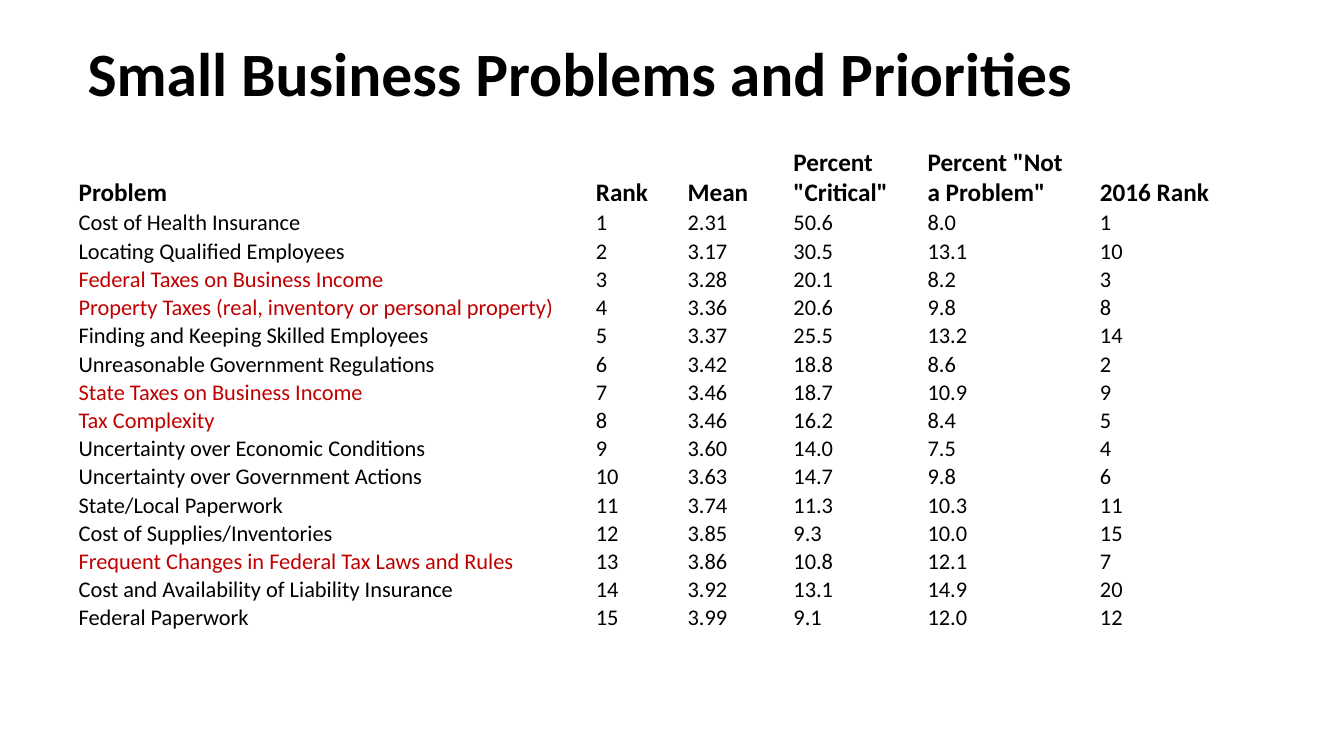
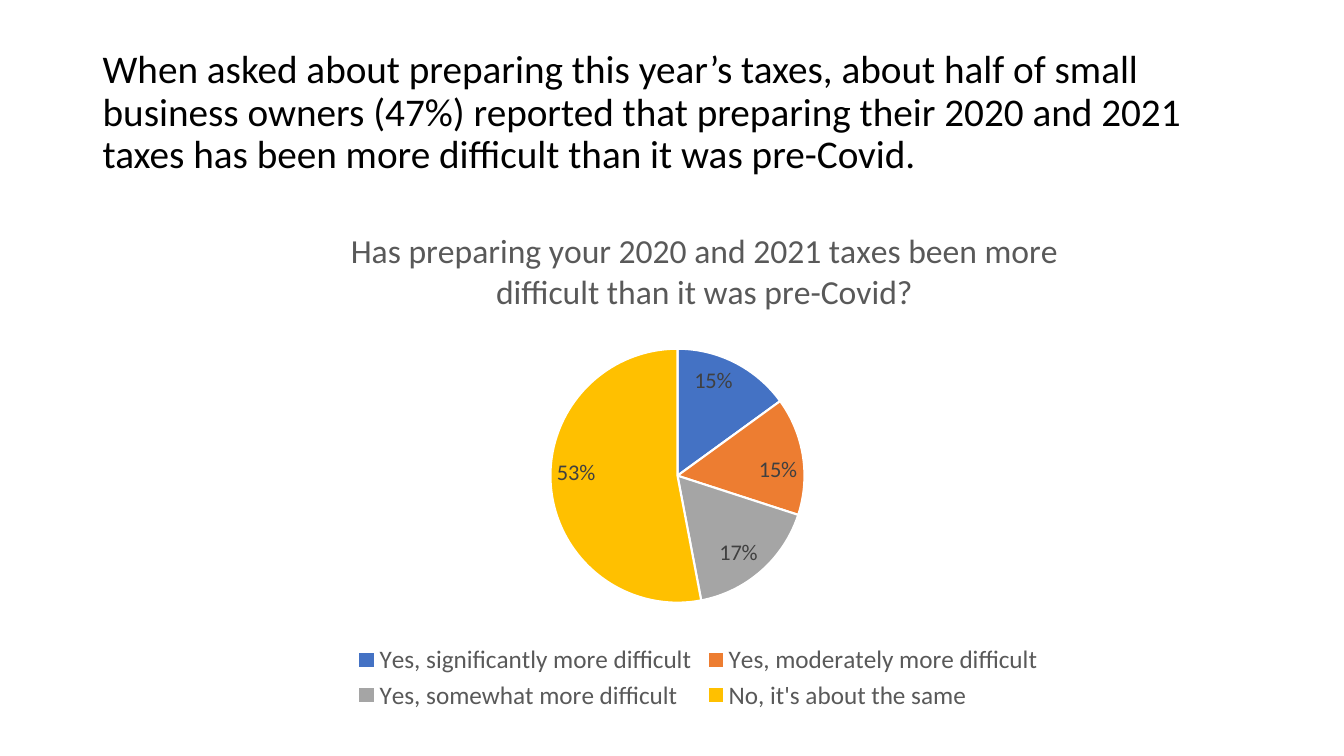
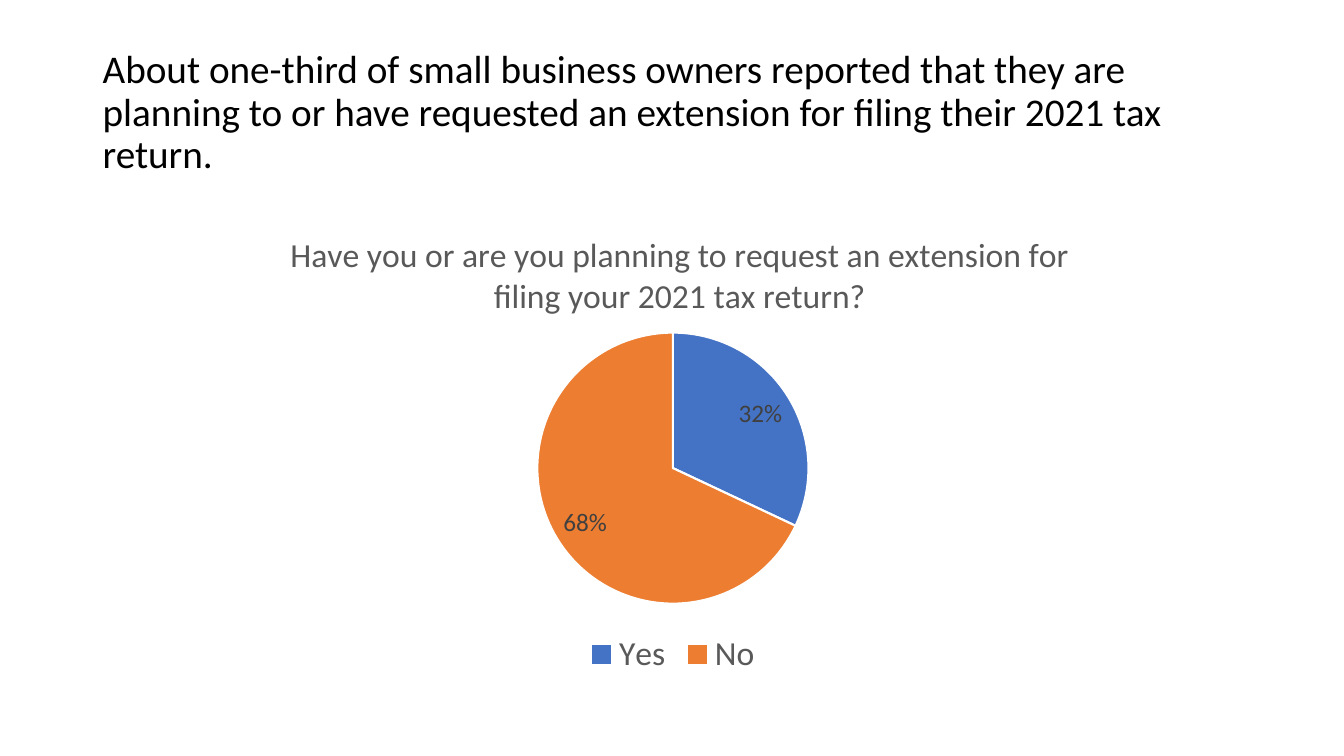
from dataclasses import dataclass

from lxml import etree
from pptx import Presentation
from pptx.chart.data import CategoryChartData
from pptx.dml.color import RGBColor
from pptx.enum.chart import XL_CHART_TYPE, XL_LABEL_POSITION, XL_LEGEND_POSITION
from pptx.enum.text import MSO_ANCHOR
from pptx.oxml.ns import qn
from pptx.util import Inches, Pt

PIE = XL_CHART_TYPE.PIE
INSIDE_END = XL_LABEL_POSITION.INSIDE_END
LEGEND_BOTTOM = XL_LEGEND_POSITION.BOTTOM
MIDDLE, BOTTOM = MSO_ANCHOR.MIDDLE, MSO_ANCHOR.BOTTOM


@dataclass(frozen=True)
class Theme:
    font: str = "Calibri"
    ink: str = "000000"
    tax: str = "C00000"
    chart_text: str = "595959"
    label: str = "404040"
    paper: str = "FFFFFF"
    slices: tuple = ("4472C4", "ED7D31", "A5A5A5", "FFC000")
    headline: int = 44
    statement: int = 28
    question: int = 24
    header: int = 18
    body: int = 16


THEME = Theme()
TITLE_SIZE = (11.5, 1.45)

PROBLEMS_TITLE = "Small Business Problems and Priorities"
TABLE_AT = (0.77, 1.45)
COLUMN_WIDTHS = (5.13, 0.91, 1.05, 1.33, 1.71, 1.24)
HEADER_HEIGHT, ROW_HEIGHT = 0.62, 0.28
HEADERS = ("Problem", "Rank", "Mean", 'Percent "Critical"',
           'Percent "Not\va Problem"', "2016 Rank")
# problem, mean, percent critical, percent not a problem, 2016 rank
PROBLEMS = [
    ("Cost of Health Insurance", "2.31", "50.6", "8.0", "1"),
    ("Locating Qualified Employees", "3.17", "30.5", "13.1", "10"),
    ("Federal Taxes on Business Income", "3.28", "20.1", "8.2", "3"),
    ("Property Taxes (real, inventory or personal property)",
     "3.36", "20.6", "9.8", "8"),
    ("Finding and Keeping Skilled Employees", "3.37", "25.5", "13.2", "14"),
    ("Unreasonable Government Regulations", "3.42", "18.8", "8.6", "2"),
    ("State Taxes on Business Income", "3.46", "18.7", "10.9", "9"),
    ("Tax Complexity", "3.46", "16.2", "8.4", "5"),
    ("Uncertainty over Economic Conditions", "3.60", "14.0", "7.5", "4"),
    ("Uncertainty over Government Actions", "3.63", "14.7", "9.8", "6"),
    ("State/Local Paperwork", "3.74", "11.3", "10.3", "11"),
    ("Cost of Supplies/Inventories", "3.85", "9.3", "10.0", "15"),
    ("Frequent Changes in Federal Tax Laws and Rules",
     "3.86", "10.8", "12.1", "7"),
    ("Cost and Availability of Liability Insurance",
     "3.92", "13.1", "14.9", "20"),
    ("Federal Paperwork", "3.99", "9.1", "12.0", "12"),
]

# frame: left, top, width, height; pie: left, top, diameter; all on the slide
SURVEYS = [
    {
        "title": "When asked about preparing this year’s taxes, about half of "
                 "small business owners (47%) reported that preparing their "
                 "2020 and 2021 taxes has been more difficult than it was "
                 "pre-Covid.",
        "question": "Has preparing your 2020 and 2021 taxes been more "
                    "difficult than it was pre-Covid?",
        "answers": {"Yes, significantly more difficult": 0.15,
                    "Yes, moderately more difficult": 0.15,
                    "Yes, somewhat more difficult": 0.17,
                    "No, it's about the same": 0.53},
        "frame": (2.27, 2, 9.31, 5.1),
        "question_at": (3.42, 2.2),
        "pie": (5.46, 3.46, 2.52),
        "legend_size": 18,
        "label_size": 16,
    },
    {
        "title": "About one-third of small business owners reported that they "
                 "are planning to or have requested an extension for filing "
                 "their 2021 tax return.",
        "question": "Have you or are you planning to request an extension for "
                    "filing your 2021 tax return?",
        "answers": {"Yes": 0.32, "No": 0.68},
        "frame": (1.52, 2, 10.31, 4.76),
        "question_at": (2.82, 2.24),
        "pie": (5.33, 3.3, 2.69),
        "legend_size": 24,
        "label_size": 18,
    },
]


def style_font(font, size, color=THEME.ink, bold=False):
    values = {"name": THEME.font, "size": Pt(size), "bold": bold}
    for name, value in values.items():
        setattr(font, name, value)
    font.color.rgb = RGBColor.from_string(color)


def add_page(deck, title, left, top, size, bold=False):
    page = deck.slides.add_slide(deck.slide_layouts[6])
    box = page.shapes.add_textbox(
        *map(Inches, (left, top) + TITLE_SIZE))
    frame = box.text_frame
    frame.word_wrap = True
    frame.vertical_anchor = MIDDLE
    para = frame.paragraphs[0]
    para.line_spacing = 0.9
    span = para.add_run()
    span.text = title
    style_font(span.font, size, bold=bold)
    return page


def fill_cell(cell, text, size, color, bold):
    values = {"margin_left": Inches(0.01), "margin_right": Inches(0.01),
              "margin_top": Inches(0.01), "margin_bottom": 0,
              "vertical_anchor": BOTTOM, "text": text}
    for name, value in values.items():
        setattr(cell, name, value)
    cell.fill.background()
    for span in cell.text_frame.paragraphs[0].runs:
        style_font(span.font, size, color, bold)


def add_problem_table(page):
    rows = [HEADERS] + [(name, str(rank), *figures) for rank, (name, *figures)
                        in enumerate(PROBLEMS, start=1)]
    heights = [HEADER_HEIGHT] + [ROW_HEIGHT] * len(PROBLEMS)
    table = page.shapes.add_table(
        len(rows), len(HEADERS),
        *map(Inches, TABLE_AT + (sum(COLUMN_WIDTHS), sum(heights)))).table
    table.first_row = table.horz_banding = False
    for column, width in zip(table.columns, COLUMN_WIDTHS):
        column.width = Inches(width)
    for row_index, (row, height) in enumerate(zip(rows, heights)):
        table.rows[row_index].height = Inches(height)
        is_header = row_index == 0
        size = THEME.header if is_header else THEME.body
        for column_index, text in enumerate(row):
            is_tax = column_index == 0 and "Tax" in text
            fill_cell(table.cell(row_index, column_index), text, size,
                      THEME.tax if is_tax else THEME.ink, is_header)


def place_in_chart(element, index, frame, left, top, diameter=None):
    """Give a chart part a manual layout, as fractions of the chart frame."""
    for old in element.findall(qn("c:layout")):
        element.remove(old)
    layout = etree.Element(qn("c:layout"))
    manual = etree.SubElement(layout, qn("c:manualLayout"))
    frame_left, frame_top, width, height = frame
    values = {"xMode": "edge", "yMode": "edge",
              "x": round((left - frame_left) / width, 4),
              "y": round((top - frame_top) / height, 4)}
    if diameter:
        values = {"layoutTarget": "inner", **values,
                  "w": round(diameter / width, 4),
                  "h": round(diameter / height, 4)}
    for name, value in values.items():
        etree.SubElement(manual, qn("c:" + name)).set("val", str(value))
    element.insert(index, layout)


def add_survey_pie(page, survey):
    data = CategoryChartData(number_format="0%")
    data.categories = list(survey["answers"])
    data.add_series("Series 1", list(survey["answers"].values()))
    frame = survey["frame"]
    chart = page.shapes.add_chart(PIE, *map(Inches, frame), data).chart
    style_font(chart.font, 10)

    chart.has_title = True
    title = chart.chart_title
    title.include_in_layout = False
    span = title.text_frame.paragraphs[0].add_run()
    span.text = survey["question"]
    style_font(span.font, THEME.question, THEME.chart_text)
    title_xml = chart.element.find(".//" + qn("c:title"))
    place_in_chart(title_xml, 1, frame, *survey["question_at"])

    chart.has_legend = True
    chart.legend.position = LEGEND_BOTTOM
    chart.legend.include_in_layout = False
    style_font(chart.legend.font, survey["legend_size"], THEME.chart_text)

    plot = chart.plots[0]
    plot.vary_by_categories = True
    plot.has_data_labels = True
    labels = plot.data_labels
    values = {"show_value": True, "show_percentage": False,
              "number_format": "0%", "number_format_is_linked": False,
              "position": INSIDE_END}
    for name, value in values.items():
        setattr(labels, name, value)
    style_font(labels.font, survey["label_size"], THEME.label)
    for index, color in zip(range(len(survey["answers"])), THEME.slices):
        part = plot.series[0].points[index].format
        part.fill.solid()
        part.fill.fore_color.rgb = RGBColor.from_string(color)
        part.line.color.rgb = RGBColor.from_string(THEME.paper)
        part.line.width = Pt(1.5)
    plot_xml = chart.element.find(".//" + qn("c:plotArea"))
    place_in_chart(plot_xml, 0, frame, *survey["pie"])


def main():
    deck = Presentation()
    deck.slide_width, deck.slide_height = Inches(13.33), Inches(7.5)
    page = add_page(deck, PROBLEMS_TITLE, 0.77, 0.03, THEME.headline, bold=True)
    add_problem_table(page)
    for survey in SURVEYS:
        page = add_page(deck, survey["title"], 0.92, 0.4, THEME.statement)
        add_survey_pie(page, survey)
    deck.save("out.pptx")


if __name__ == "__main__":
    main()
